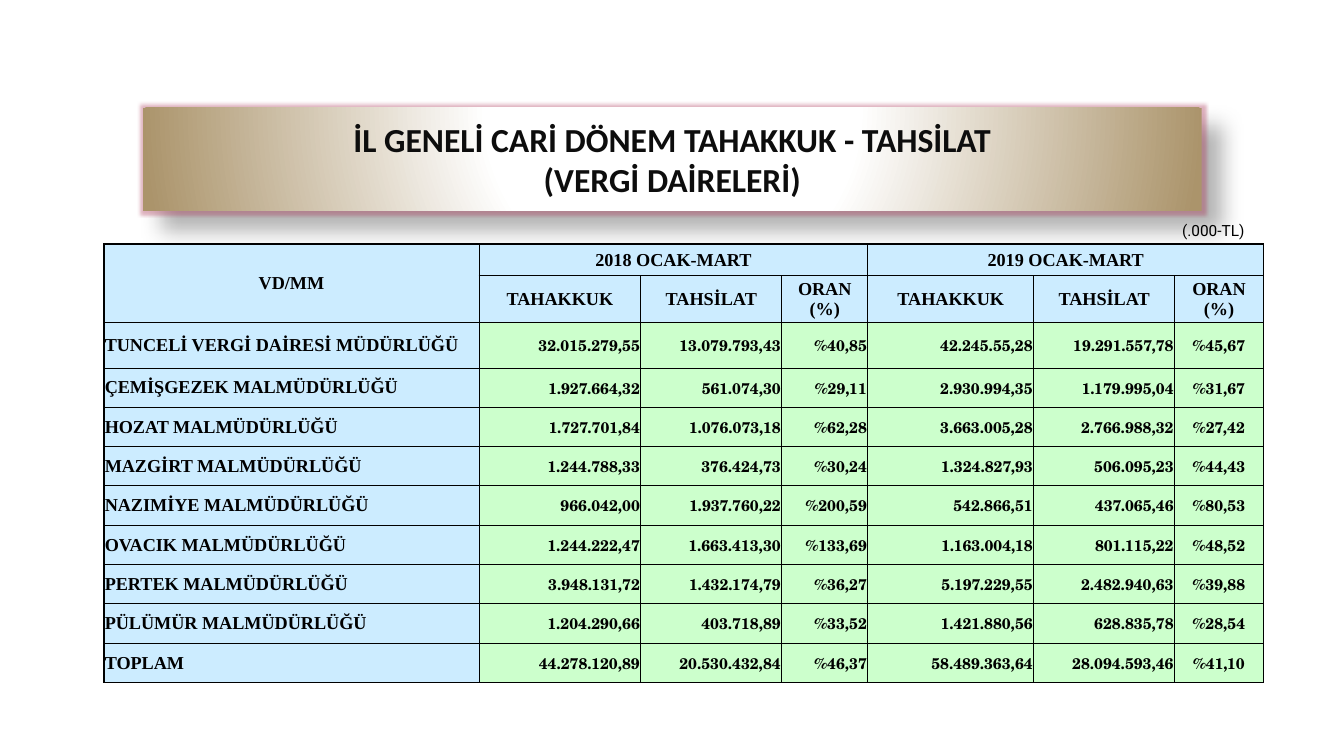
from dataclasses import dataclass
from typing import NamedTuple

from lxml.etree import SubElement
from pptx import Presentation
from pptx.dml.color import RGBColor
from pptx.enum.text import MSO_ANCHOR, MSO_AUTO_SIZE, PP_ALIGN
from pptx.oxml import parse_xml
from pptx.oxml.ns import nsdecls, qn
from pptx.slide import Slide
from pptx.table import Table, _Cell
from pptx.text.text import TextFrame
from pptx.util import Cm, Pt


class TextStyle(NamedTuple):
    font: str
    size: float
    color: str
    bold: bool


@dataclass(frozen=True)
class Theme:
    header_fill: str = "CCECFF"
    figure_fill: str = "CCFFCC"
    border: str = "000000"
    banner_center: str = "FFFFFF"
    banner_edge: str = "AB946B"
    glow: str = "B04060"
    title: TextStyle = TextStyle("Calibri", 24, "0D0D0D", True)
    unit: TextStyle = TextStyle("Roboto", 11, "000000", False)
    label: TextStyle = TextStyle("Times New Roman", 13, "000000", True)
    figure: TextStyle = TextStyle("TeX Gyre Schola", 11, "000000", True)


class Office(NamedTuple):
    name: str
    figures: tuple[str, ...]


THEME = Theme()
COLUMN_WIDTHS = (9.45, 4.08, 3.55, 2.17, 4.18, 3.55, 2.24)
ROW_HEIGHTS = (0.79, 1.19, 1.14) + (0.99,) * 8
PERIODS = ("2018 OCAK-MART", "2019 OCAK-MART")
MEASURES = ("TAHAKKUK", "TAHSİLAT", "ORAN (%)")
OFFICES = (
    Office("TUNCELİ VERGİ DAİRESİ MÜDÜRLÜĞÜ",
           ("32.015.279,55", "13.079.793,43", "%40,85", "42.245.55,28", "19.291.557,78", "%45,67")),
    Office("ÇEMİŞGEZEK MALMÜDÜRLÜĞÜ",
           ("1.927.664,32", "561.074,30", "%29,11", "2.930.994,35", "1.179.995,04", "%31,67")),
    Office("HOZAT MALMÜDÜRLÜĞÜ",
           ("1.727.701,84", "1.076.073,18", "%62,28", "3.663.005,28", "2.766.988,32", "%27,42")),
    Office("MAZGİRT MALMÜDÜRLÜĞÜ",
           ("1.244.788,33", "376.424,73", "%30,24", "1.324.827,93", "506.095,23", "%44,43")),
    Office("NAZIMİYE MALMÜDÜRLÜĞÜ",
           ("966.042,00", "1.937.760,22", "%200,59", "542.866,51", "437.065,46", "%80,53")),
    Office("OVACIK MALMÜDÜRLÜĞÜ",
           ("1.244.222,47", "1.663.413,30", "%133,69", "1.163.004,18", "801.115,22", "%48,52")),
    Office("PERTEK MALMÜDÜRLÜĞÜ",
           ("3.948.131,72", "1.432.174,79", "%36,27", "5.197.229,55", "2.482.940,63", "%39,88")),
    Office("PÜLÜMÜR MALMÜDÜRLÜĞÜ",
           ("1.204.290,66", "403.718,89", "%33,52", "1.421.880,56", "628.835,78", "%28,54")),
    Office("TOPLAM",
           ("44.278.120,89", "20.530.432,84", "%46,37", "58.489.363,64", "28.094.593,46", "%41,10")),
)


def write_text(frame: TextFrame, text: str, style: TextStyle, alignment: PP_ALIGN) -> None:
    frame.text = text
    for para in frame.paragraphs:
        para.alignment = alignment
        for span in para.runs:
            span.font.name = style.font
            span.font.size = Pt(style.size)
            span.font.bold = style.bold
            span.font.color.rgb = RGBColor.from_string(style.color)


def add_title(page: Slide) -> None:
    title = page.shapes.title
    title.left, title.top, title.width, title.height = Cm(3.61), Cm(2.72), Cm(26.67), Cm(2.59)
    title.text_frame.word_wrap = True
    title.text_frame.auto_size = MSO_AUTO_SIZE.NONE
    title.text_frame.vertical_anchor = MSO_ANCHOR.MIDDLE
    write_text(title.text_frame, "İL GENELİ CARİ DÖNEM TAHAKKUK - TAHSİLAT\v(VERGİ DAİRELERİ)",
               THEME.title, PP_ALIGN.CENTER)
    namespace = nsdecls("a")
    parts = (
        f'<a:prstGeom {namespace} prst="roundRect"><a:avLst><a:gd name="adj" fmla="val 0"/>'
        '</a:avLst></a:prstGeom>',
        f'<a:gradFill {namespace} rotWithShape="1"><a:gsLst>'
        f'<a:gs pos="0"><a:srgbClr val="{THEME.banner_center}"/></a:gs>'
        f'<a:gs pos="35000"><a:srgbClr val="{THEME.banner_center}"/></a:gs>'
        f'<a:gs pos="100000"><a:srgbClr val="{THEME.banner_edge}"/></a:gs></a:gsLst>'
        '<a:path path="circle"><a:fillToRect l="50000" t="-80000" r="50000" b="180000"/>'
        '</a:path></a:gradFill>',
        f'<a:effectLst {namespace}><a:glow rad="63500"><a:srgbClr val="{THEME.glow}">'
        '<a:alpha val="40000"/></a:srgbClr></a:glow>'
        '<a:outerShdw blurRad="190500" dist="228600" dir="2700000" algn="ctr" rotWithShape="0">'
        '<a:srgbClr val="000000"><a:alpha val="30000"/></a:srgbClr></a:outerShdw></a:effectLst>',
    )
    for part in parts:
        title.element.spPr.append(parse_xml(part))


def add_unit(page: Slide) -> None:
    box = page.shapes.add_textbox(Cm(29.54), Cm(5.46), Cm(2.31), Cm(0.74))
    box.text_frame.word_wrap = True
    box.text_frame.auto_size = MSO_AUTO_SIZE.SHAPE_TO_FIT_TEXT
    write_text(box.text_frame, "(.000-TL)", THEME.unit, PP_ALIGN.LEFT)


def add_borders(cell: _Cell, row: int, column: int) -> None:
    properties = cell._tc.get_or_add_tcPr()
    outer_sides = {"L": column == 0, "R": False, "T": row == 0, "B": row == len(ROW_HEIGHTS) - 1}
    for side, outer in outer_sides.items():
        line = SubElement(properties, qn(f"a:ln{side}"), w=str(Pt(1 if outer else 0.5)))
        fill = SubElement(line, qn("a:solidFill"))
        SubElement(fill, qn("a:srgbClr"), val=THEME.border)


def format_cells(table: Table) -> None:
    for row in range(len(ROW_HEIGHTS)):
        for column in range(len(COLUMN_WIDTHS)):
            cell = table.cell(row, column)
            add_borders(cell, row, column)
            is_header = row < 2 or column == 0
            cell.fill.solid()
            cell.fill.fore_color.rgb = RGBColor.from_string(
                THEME.header_fill if is_header else THEME.figure_fill)
            cell.vertical_anchor = MSO_ANCHOR.MIDDLE
            cell.margin_left = cell.margin_right = cell.margin_top = Cm(0.02)
            cell.margin_bottom = 0


def fill_table(table: Table) -> None:
    table.cell(0, 0).merge(table.cell(1, 0))
    write_text(table.cell(0, 0).text_frame, "VD/MM", THEME.label, PP_ALIGN.CENTER)
    for index, period in enumerate(PERIODS):
        first = 1 + index * len(MEASURES)
        table.cell(0, first).merge(table.cell(0, first + len(MEASURES) - 1))
        write_text(table.cell(0, first).text_frame, period, THEME.label, PP_ALIGN.CENTER)
        for column, measure in enumerate(MEASURES, first):
            write_text(table.cell(1, column).text_frame, measure, THEME.label, PP_ALIGN.CENTER)
    last = len(COLUMN_WIDTHS) - 1
    for row, office in enumerate(OFFICES, 2):
        write_text(table.cell(row, 0).text_frame, office.name, THEME.label, PP_ALIGN.LEFT)
        for column, figure in enumerate(office.figures, 1):
            alignment = PP_ALIGN.CENTER if column == last else PP_ALIGN.RIGHT
            write_text(table.cell(row, column).text_frame, figure, THEME.figure, alignment)


def add_revenue_table(page: Slide) -> None:
    table = page.shapes.add_table(len(ROW_HEIGHTS), len(COLUMN_WIDTHS), Cm(2.62), Cm(6.15),
                                  Cm(sum(COLUMN_WIDTHS)), Cm(sum(ROW_HEIGHTS))).table
    table.first_row = table.horz_banding = False
    for column, width in zip(table.columns, COLUMN_WIDTHS):
        column.width = Cm(width)
    for row, height in zip(table.rows, ROW_HEIGHTS):
        row.height = Cm(height)
    format_cells(table)
    fill_table(table)


def main() -> None:
    deck = Presentation()
    deck.slide_width, deck.slide_height = Cm(33.87), Cm(19.05)
    page = deck.slides.add_slide(deck.slide_layouts[5])
    add_revenue_table(page)
    add_title(page)
    add_unit(page)
    deck.save("out.pptx")


if __name__ == "__main__":
    main()
